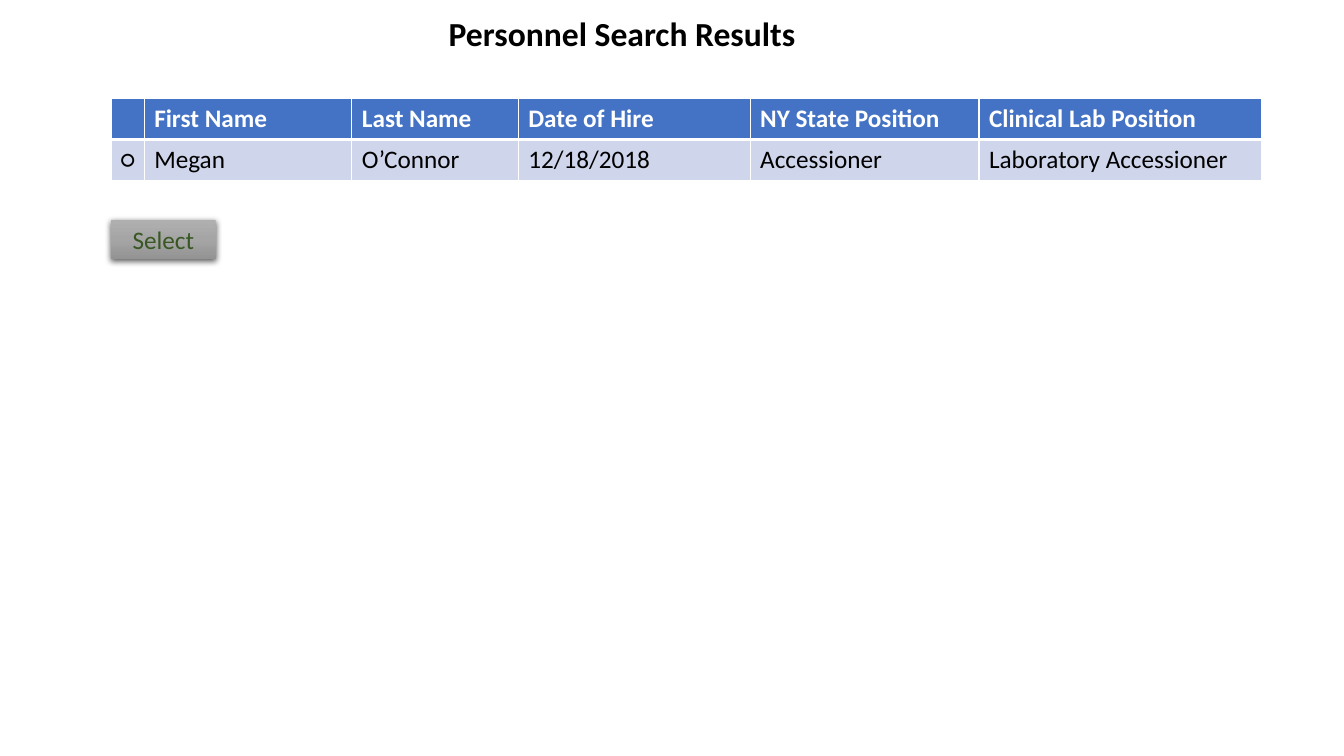
from copy import deepcopy
from dataclasses import dataclass

from lxml import etree
from pptx import Presentation
from pptx import util as u
from pptx.dml.color import RGBColor
from pptx.enum import shapes, text
from pptx.oxml import ns

BLACK = RGBColor(0x00, 0x00, 0x00)
WHITE = RGBColor(0xFF, 0xFF, 0xFF)
HEADER_BLUE = RGBColor(0x44, 0x72, 0xC4)
ROW_BLUE = RGBColor(0xCF, 0xD5, 0xEA)
BUTTON_GREEN = RGBColor(0x38, 0x57, 0x23)
BUTTON_GREYS = (
    RGBColor(0xAF, 0xAF, 0xAF),
    RGBColor(0xA5, 0xA5, 0xA5),
    RGBColor(0x93, 0x93, 0x93),
)
FONT = "Calibri"
ROW_HEIGHT = 0.405


@dataclass(frozen=True)
class Column:
    header: str
    value: str
    width: float


@dataclass(frozen=True)
class RowStyle:
    fill: RGBColor
    color: RGBColor
    bold: bool
    top: float
    bottom: float


COLUMNS = (
    Column("", "○", 0.33),
    Column("First Name", "Megan", 2.06),
    Column("Last Name", "O’Connor", 1.65),
    Column("Date of Hire", "12/18/2018", 2.3),
    Column("NY State Position", "Accessioner", 2.27),
    Column("Clinical Lab Position", "Laboratory Accessioner", 2.8),
)
HEADER_STYLE = RowStyle(HEADER_BLUE, WHITE, True, 1, 3)
RESULT_STYLE = RowStyle(ROW_BLUE, BLACK, False, 3, 1)


def add_text(paragraph, words: str, size: float, color: RGBColor, bold: bool = False) -> None:
    run = paragraph.add_run()
    run.text = words
    run.font.name = FONT
    run.font.size = u.Pt(size)
    run.font.bold = bold
    run.font.color.rgb = color


def add_title(slide) -> None:
    title = slide.shapes.title
    title.left, title.top = u.Inches(4.35), u.Inches(0.08)
    title.width, title.height = u.Inches(3.68), u.Inches(0.5)
    frame = title.text_frame
    frame.word_wrap = False
    frame.auto_size = text.MSO_AUTO_SIZE.SHAPE_TO_FIT_TEXT
    frame.vertical_anchor = text.MSO_ANCHOR.TOP
    frame.paragraphs[0].alignment = text.PP_ALIGN.LEFT
    add_text(frame.paragraphs[0], "Personnel Search Results", 24, BLACK, True)


def add_borders(cell, style: RowStyle) -> None:
    properties = cell._tc.get_or_add_tcPr()
    widths = {"lnL": 1, "lnR": 1, "lnT": style.top, "lnB": style.bottom}
    for position, (side, width) in enumerate(widths.items()):
        line = etree.Element(ns.qn(f"a:{side}"), w=str(u.Pt(width)))
        fill = etree.SubElement(line, ns.qn("a:solidFill"))
        etree.SubElement(fill, ns.qn("a:srgbClr"), val=str(WHITE))
        properties.insert(position, line)


def fill_cell(cell, words: str, style: RowStyle) -> None:
    cell.fill.solid()
    cell.fill.fore_color.rgb = style.fill
    add_borders(cell, style)
    if words:
        add_text(cell.text_frame.paragraphs[0], words, 18, style.color, style.bold)


def add_results_table(slide) -> None:
    table_width = sum(column.width for column in COLUMNS)
    table = slide.shapes.add_table(
        2, len(COLUMNS), u.Inches(1.1), u.Inches(0.98),
        u.Inches(table_width), u.Inches(2 * ROW_HEIGHT),
    ).table
    for row in table.rows:
        row.height = u.Inches(ROW_HEIGHT)
    for index, column in enumerate(COLUMNS):
        table.columns[index].width = u.Inches(column.width)
        fill_cell(table.cell(0, index), column.header, HEADER_STYLE)
        fill_cell(table.cell(1, index), column.value, RESULT_STYLE)


def shade_button(button) -> None:
    button.fill.gradient()
    button.fill.gradient_angle = 270
    stops = button._element.spPr.find(".//" + ns.qn("a:gsLst"))
    stops.insert(1, deepcopy(stops[0]))
    for index, (stop, grey) in enumerate(zip(button.fill.gradient_stops, BUTTON_GREYS)):
        stop.position = index / 2
        stop.color.rgb = grey


def add_shadow(button) -> None:
    button.shadow.inherit = False
    effects = button._element.spPr.find(ns.qn("a:effectLst"))
    shadow = etree.SubElement(
        effects, ns.qn("a:outerShdw"), blurRad=str(u.Pt(4.5)), dist=str(u.Pt(1.5)),
        dir="5400000", algn="ctr", rotWithShape="0",
    )
    color = etree.SubElement(shadow, ns.qn("a:srgbClr"), val=str(BLACK))
    etree.SubElement(color, ns.qn("a:alpha"), val="63000")


def add_select_button(slide) -> None:
    button = slide.shapes.add_shape(
        shapes.MSO_SHAPE.RECTANGLE,
        u.Inches(1.1), u.Inches(2.18), u.Inches(1.04), u.Inches(0.39),
    )
    shade_button(button)
    button.line.fill.background()
    add_shadow(button)
    frame = button.text_frame
    frame.vertical_anchor = text.MSO_ANCHOR.MIDDLE
    frame.paragraphs[0].alignment = text.PP_ALIGN.CENTER
    add_text(frame.paragraphs[0], "Select", 18, BUTTON_GREEN)


def main() -> None:
    presentation = Presentation()
    presentation.slide_width = u.Inches(13.33)
    presentation.slide_height = u.Inches(7.5)
    slide = presentation.slides.add_slide(presentation.slide_layouts[5])
    add_title(slide)
    add_results_table(slide)
    add_select_button(slide)
    presentation.save("out.pptx")


if __name__ == "__main__":
    main()
